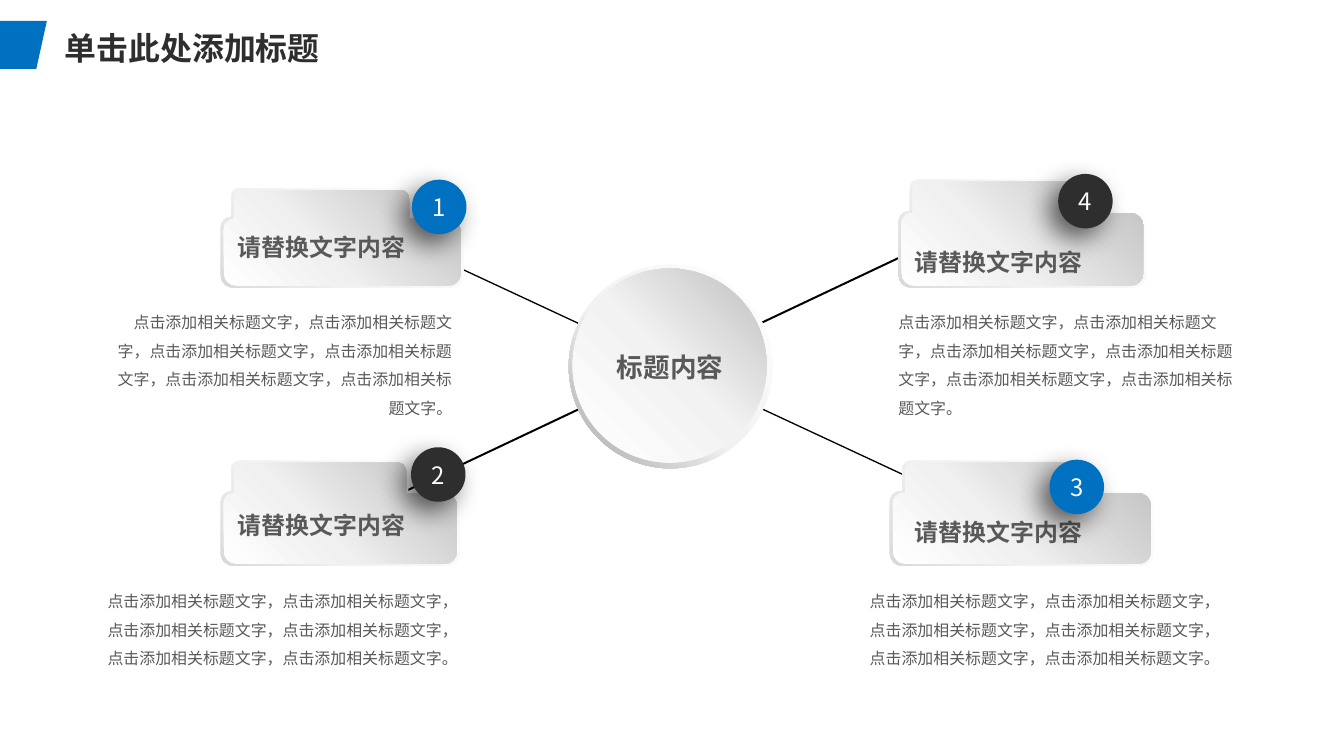
from lxml import etree
from pptx import Presentation
from pptx.dml.color import RGBColor
from pptx.enum.lang import MSO_LANGUAGE_ID
from pptx.enum.shapes import MSO_CONNECTOR, MSO_SHAPE
from pptx.enum.text import MSO_ANCHOR, MSO_AUTO_SIZE, PP_ALIGN
from pptx.oxml.ns import qn
from pptx.util import Inches, Pt

LEFT, CENTER, RIGHT = PP_ALIGN.LEFT, PP_ALIGN.CENTER, PP_ALIGN.RIGHT
MIDDLE = MSO_ANCHOR.MIDDLE
GROW = MSO_AUTO_SIZE.SHAPE_TO_FIT_TEXT
STRAIGHT = MSO_CONNECTOR.STRAIGHT
OVAL, DONUT = MSO_SHAPE.OVAL, MSO_SHAPE.DONUT
CHINESE = MSO_LANGUAGE_ID.SIMPLIFIED_CHINESE

COLORS = {"blue": "0070C0", "dark": "2E2E2E", "gray": "595959",
          "white": "FFFFFF", "black": "000000"}
HAN = "Noto Sans CJK SC"
RIM = [(0, "FFFFFF"), (62, "F2F2F2"), (100, "D9D9D9")]
FACE = [(0, "FFFFFF"), (39, "F0F0F0"), (100, "BFBFBF")]
RING = [(0, "FFFFFF"), (55, "F2F2F2"), (100, "A6A6A6")]
DISC = [(0, "FFFFFF"), (51, "F2F2F2"), (100, "BFBFBF")]
DOWN, UP = 135, 315

HEAD = "请替换文字内容"
BODY = "，".join(["点击添加相关标题文字"] * 6) + "。"

# left, top, right, bottom, start and end of tab, shoulder height
CARDS = [
    (2.31, 1.97, 4.85, 3.01, 2.42, 4.3, 2.27),
    (2.31, 4.82, 4.81, 5.92, 2.42, 4.27, 5.14),
    (9.4, 1.88, 11.99, 3.01, 9.52, 11.43, 2.21),
    (9.31, 4.82, 12.07, 5.92, 9.44, 11.48, 5.14),
]
HEADS = [(2.39, 2.38, 3.31), (9.47, 2.54, 3.19),
         (2.39, 5.29, 4.97), (9.47, 5.37, 3.09)]
BODIES = [(1.07, 3.12, 3.76, RIGHT), (0.89, 6.04, 4, RIGHT),
          (9, 6.04, 3.99, LEFT), (9.3, 3.12, 3.76, LEFT)]
BADGES = [("1", 4.31, 1.88, "blue"), ("2", 4.3, 4.68, "dark"),
          ("3", 10.98, 4.81, "blue"), ("4", 11.07, 1.82, "dark")]


def rgb(name):
    return RGBColor.from_string(COLORS[name])


def add_node(parent, tag, **attrs):
    node = etree.SubElement(parent, qn(tag))
    for key, value in attrs.items():
        node.set(key, str(value))
    return node


def fade(shape, stops, angle):
    """Fill a shape with a linear gradient and no outline."""
    shape.shadow.inherit = False
    shape.line.fill.background()
    grad = etree.Element(qn("a:gradFill"), rotWithShape="1")
    group = add_node(grad, "a:gsLst")
    for pos, color in stops:
        stop = add_node(group, "a:gs", pos=pos * 1000)
        add_node(stop, "a:srgbClr", val=color)
    add_node(grad, "a:lin", ang=angle * 60000, scaled=0)
    shape.line._ln.addprevious(grad)


def paint(shape, color):
    shape.shadow.inherit = False
    shape.fill.solid()
    shape.fill.fore_color.rgb = rgb(color)
    shape.line.fill.background()


def drop(shape):
    """Give a shape a soft shadow to its lower left."""
    effects = shape._element.spPr.find(qn("a:effectLst"))
    shade = add_node(effects, "a:outerShdw", blurRad=Pt(20), dist=Pt(10),
                     dir=135 * 60000, algn="tr", rotWithShape=0)
    color = add_node(shade, "a:srgbClr", val=COLORS["black"])
    add_node(color, "a:alpha", val=60000)


def write(shape, words, size, color, font, align=LEFT, bold=False):
    para = shape.text_frame.paragraphs[0]
    para.text = words
    para.alignment = align
    run = para.runs[0]
    run.font.size = Pt(size)
    run.font.bold = bold
    run.font.name = font
    run.font.color.rgb = rgb(color)
    run.font.language_id = CHINESE
    latin = run.font._element.find(qn("a:latin"))
    latin.addnext(etree.Element(qn("a:ea"), typeface=HAN))


def add_text(slide, x, y, w, h, *args, **style):
    box = slide.shapes.add_textbox(Inches(x), Inches(y), Inches(w), Inches(h))
    box.text_frame.word_wrap = True
    box.text_frame.auto_size = GROW
    write(box, *args, **style)
    return box.text_frame


def add_round(slide, kind, x, y, size):
    return slide.shapes.add_shape(kind, Inches(x), Inches(y),
                                  Inches(size), Inches(size))


def add_outline(slide, points):
    spots = [(Inches(x), Inches(y)) for x, y in points]
    pen = slide.shapes.build_freeform(*spots[0])
    pen.add_line_segments(spots[1:], close=True)
    return pen.convert_to_shape()


def add_line(slide, x1, y1, x2, y2, width):
    line = slide.shapes.add_connector(STRAIGHT, Inches(x1), Inches(y1),
                                      Inches(x2), Inches(y2))
    line.line.color.rgb = rgb("black")
    line.line.width = Pt(width)
    add_node(line._element.spPr, "a:effectLst")


def toward(start, end, dist):
    dx, dy = end[0] - start[0], end[1] - start[1]
    part = dist / max(abs(dx), abs(dy))
    return start[0] + dx * part, start[1] + dy * part


def add_soft(slide, corners):
    """Draw an upright outline whose (x, y, radius) corners are curves."""
    points, bends = [], {}
    for i, (x, y, radius) in enumerate(corners):
        if not radius:
            points.append((x, y))
            continue
        spot, after = (x, y), corners[(i + 1) % len(corners)]
        points.append(toward(spot, corners[i - 1], radius))
        bends[len(points)] = [toward(spot, corners[i - 1], radius * 0.45),
                              toward(spot, after, radius * 0.45)]
        points.append(toward(spot, after, radius))
    shape = add_outline(slide, points)
    sides = list(shape._element.iter(qn("a:lnTo")))
    for index, pulls in bends.items():
        side = sides[index - 1]
        curve = etree.Element(qn("a:cubicBezTo"))
        side.addprevious(curve)
        for x, y in pulls:
            add_node(curve, "a:pt", x=Inches(x) - shape.left,
                     y=Inches(y) - shape.top)
        curve.append(side[0])
        side.getparent().remove(side)
    return shape


def add_card(slide, left, top, right, low, start, end, mid):
    """Draw a tabbed card: a pale rim with a smaller face on it."""
    for dx, dy, stops, angle in ((0, 0, RIM, DOWN), (0.03, 0.02, FACE, UP)):
        x1, x2, tab, stop = left + dx, right - dx, start + dx, end - dy
        y1, y2, y3 = top + dy, mid + dy, low - dy
        corners = [(tab, y1, 0.09), (stop, y1, 0.09), (stop, y2, 0),
                   (x2, y2, 0.13), (x2, y3, 0.13), (x1, y3, 0.13),
                   (x1, y2, 0.11), (tab, y2, 0)]
        fade(add_soft(slide, corners), stops, angle)


def add_hub(slide):
    ring = add_round(slide, DONUT, 5.95, 2.77, 2.13)
    ring.adjustments[0] = 0.05
    fade(ring, RING, DOWN)
    fade(add_round(slide, OVAL, 5.99, 2.81, 2.03), DISC, UP)
    frame = add_text(slide, 6.3, 3.67, 1.42, 0.34, "标题内容", 20, "gray",
                     HAN, align=CENTER, bold=True)
    frame.margin_left = frame.margin_right = 0
    frame.margin_top = frame.margin_bottom = 0


def add_body(slide, x, y, w, align):
    frame = add_text(slide, x, y, w, 1.01, BODY, 12, "gray", "Arial",
                     align=align)
    para = frame.paragraphs[0]
    para.line_spacing = 1.5
    para._p.get_or_add_pPr().set("hangingPunct", "0")


def add_badge(slide, digit, x, y, color):
    badge = add_round(slide, OVAL, x, y, 0.57)
    paint(badge, color)
    drop(badge)
    badge.text_frame.vertical_anchor = MIDDLE
    write(badge, digit, 18, "white", HAN, align=CENTER)


def main():
    deck = Presentation()
    deck.slide_width, deck.slide_height = Inches(14.06), Inches(7.91)
    slide = deck.slides.add_slide(deck.slide_layouts[6])

    flag = [(0, 0.22), (0.49, 0.22), (0.38, 0.72), (0, 0.72)]
    paint(add_outline(slide, flag), "blue")
    add_text(slide, 0.58, 0.25, 12.36, 0.5, "单击此处添加标题", 24, "dark",
             "Calibri", bold=True)
    add_line(slide, 9.8, 5.13, 4.22, 2.53, 1)
    add_line(slide, 3.5, 5.49, 10.52, 2.17, 1.5)
    for card in CARDS:
        add_card(slide, *card)
    for x, y, w in HEADS:
        add_text(slide, x, y, w, 0.4, HEAD, 18, "gray", "Calibri", bold=True)
    add_hub(slide)
    for body in BODIES:
        add_body(slide, *body)
    for badge in BADGES:
        add_badge(slide, *badge)
    deck.save("out.pptx")


if __name__ == "__main__":
    main()
